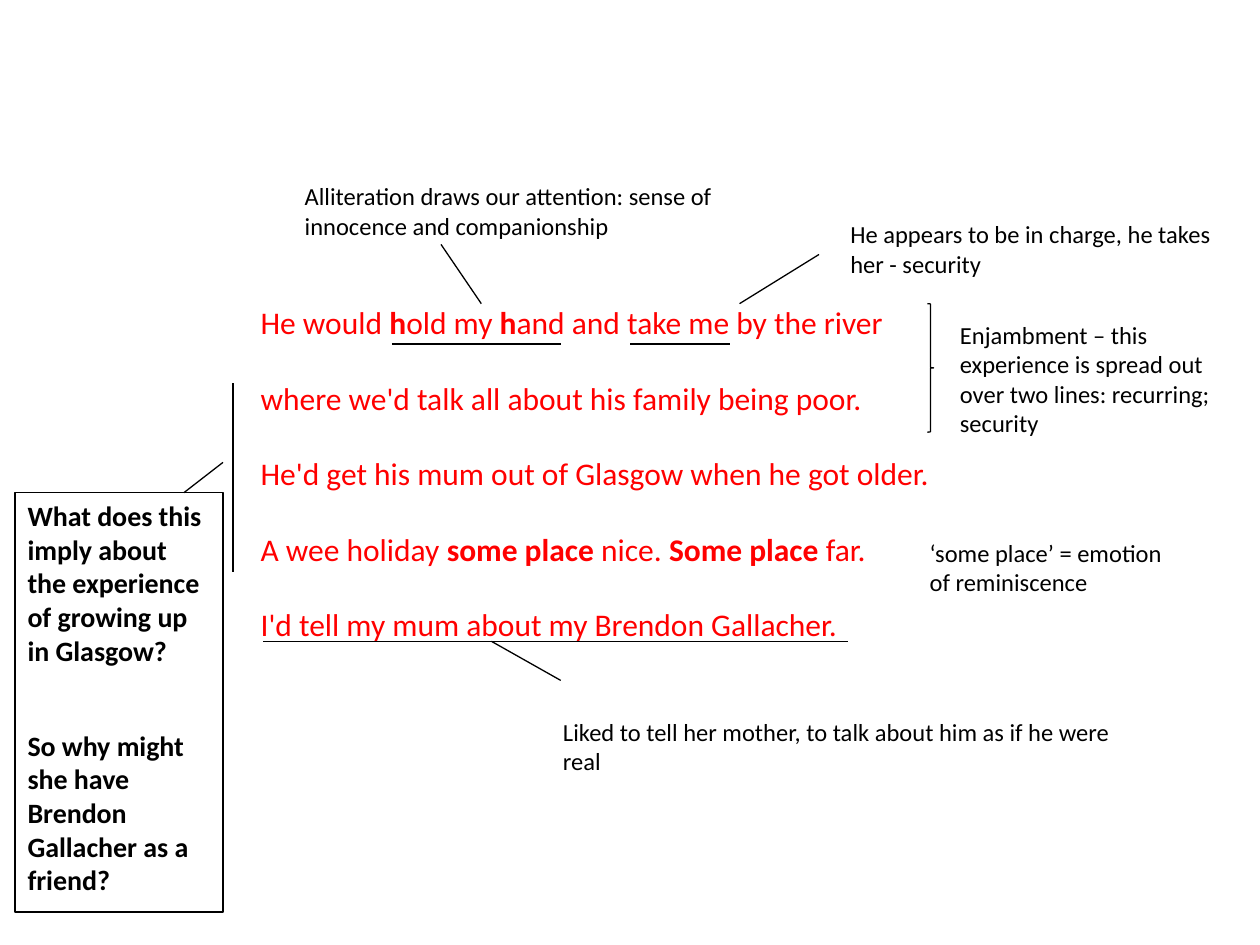
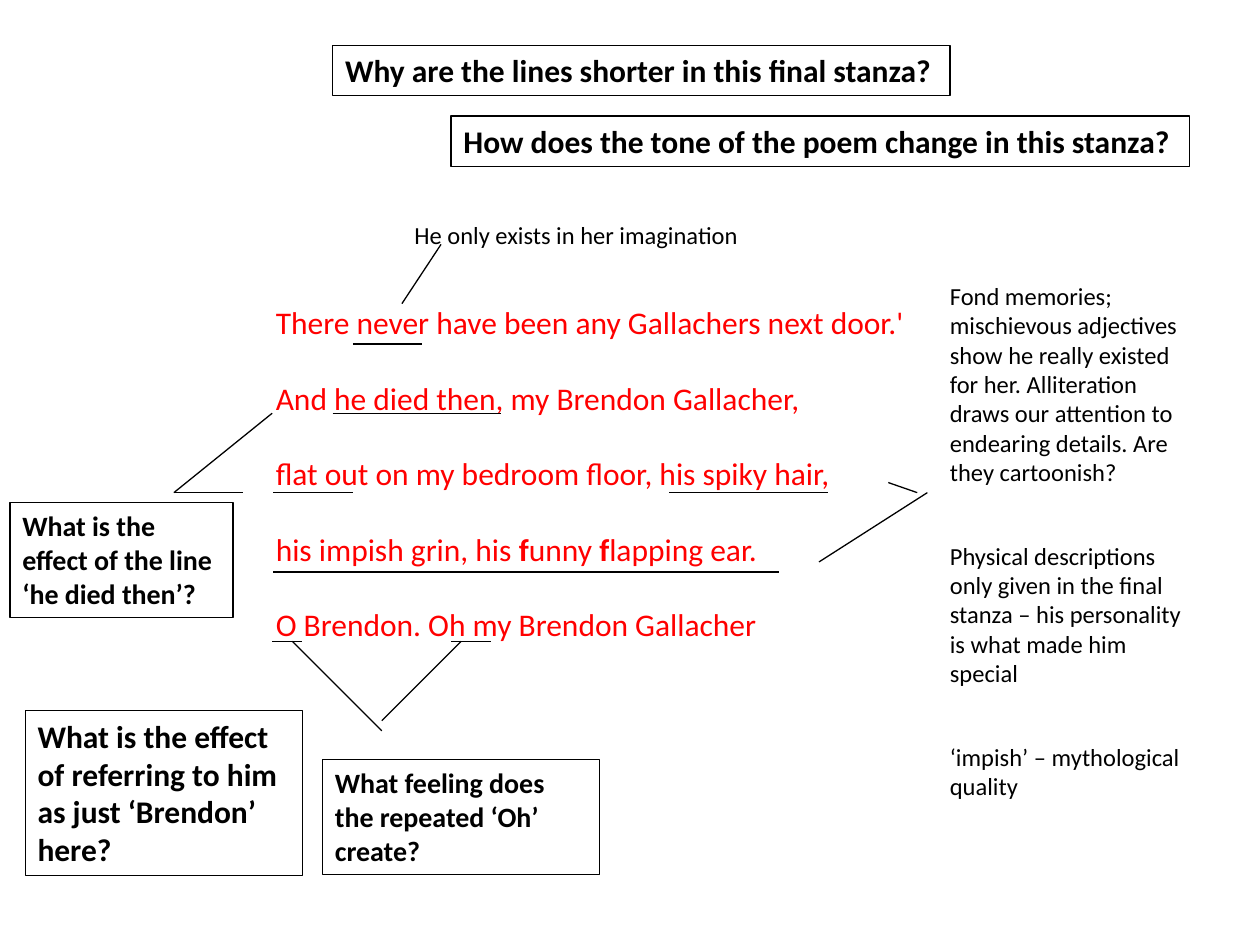
from pptx import Presentation
from pptx.dml.color import RGBColor
from pptx.enum.shapes import MSO_CONNECTOR, MSO_SHAPE
from pptx.enum.text import MSO_ANCHOR, MSO_AUTO_SIZE, PP_ALIGN
from pptx.oxml.ns import qn
from pptx.util import Inches, Pt
from lxml import etree

BLACK = RGBColor(0x00, 0x00, 0x00)
RED = RGBColor(0xFF, 0x00, 0x00)
FONT = "Calibri"
LINE_WIDTH = Pt(0.75)
POEM_GAP = 1.2
NOTE_GAP = 2.2

STRAIGHT = MSO_CONNECTOR.STRAIGHT
RECTANGLE = MSO_SHAPE.RECTANGLE
RIGHT_BRACE = MSO_SHAPE.RIGHT_BRACE
TOP = MSO_ANCHOR.TOP
MIDDLE = MSO_ANCHOR.MIDDLE
LEFT = PP_ALIGN.LEFT
FIT_SHAPE = MSO_AUTO_SIZE.SHAPE_TO_FIT_TEXT


class AnnotatedPoem:
    def __init__(self, prs):
        self.prs = prs
        self.s = None

    def new_slide(self):
        self.s = self.prs.slides.add_slide(self.prs.slide_layouts[6])

    def set_text(self, sp, paragraphs, size, color=BLACK, bold=False,
                 gap=NOTE_GAP, anchor=TOP, wrap=True):
        tf = sp.text_frame
        tf.word_wrap = wrap
        tf.auto_size = FIT_SHAPE
        tf.vertical_anchor = anchor
        for i, text in enumerate(paragraphs):
            p = tf.paragraphs[0] if i == 0 else tf.add_paragraph()
            p.alignment = LEFT
            p.font.name = FONT
            p.font.size = Pt(size)
            p.font.color.rgb = color
            p.font.bold = bold
            if i:
                p.space_before = Pt(size * gap)
            for j, part in enumerate(text.split("*")):
                r = p.add_run()
                r.text = part
                if j % 2:
                    r.font.bold = True

    def text_box(self, x, y, w, h):
        return self.s.shapes.add_textbox(Inches(x), Inches(y), Inches(w), Inches(h))

    def outline(self, preset, x, y, w, h):
        sp = self.s.shapes.add_shape(preset, Inches(x), Inches(y), Inches(w), Inches(h))
        sp.shadow.inherit = False
        sp.fill.background()
        sp.line.color.rgb = BLACK
        sp.line.width = LINE_WIDTH
        return sp

    def stanza(self, x, w, verses):
        self.set_text(self.text_box(x, 2.34, w, 2.83), verses, 18, RED,
                      gap=POEM_GAP, anchor=MIDDLE, wrap=False)

    def note(self, x, y, w, h, *paragraphs):
        self.set_text(self.text_box(x, y, w, h), paragraphs, 14)

    def question(self, x, y, w, h, *paragraphs, size=16, wrap=True):
        self.set_text(self.outline(RECTANGLE, x, y, w, h), paragraphs, size,
                      bold=True, wrap=wrap)

    def brace(self, x, y, w, h):
        self.outline(RIGHT_BRACE, x, y, w, h)

    def line(self, x1, y1, x2, y2):
        c = self.s.shapes.add_connector(
            STRAIGHT, Inches(x1), Inches(y1), Inches(x2), Inches(y2))
        c.line.color.rgb = BLACK
        c.line.width = LINE_WIDTH
        etree.SubElement(c._element.spPr, qn("a:effectLst"))

    def underline(self, y, *spans):
        for start, end in spans:
            self.line(start, y, end, y)


def friendship_slide(poem):
    poem.new_slide()
    poem.stanza(1.97, 5.58, [
        "He would *h*old my *h*and and take me by the river",
        "where we'd talk all about his family being poor.",
        "He'd get his mum out of Glasgow when he got older.",
        "A wee holiday *some place* nice. *Some place *far.",
        "I'd tell my mum about my Brendon Gallacher.",
    ])
    poem.underline(2.73, (3.11, 4.45), (5, 5.79))
    poem.underline(5.09, (2.09, 6.73))
    for pointer in [
        (3.82, 2.41, 3.5, 1.94),
        (5.87, 2.41, 6.5, 2.02),
        (1.85, 3.04, 1.85, 4.54),
        (1.77, 3.67, 1.46, 3.91),
        (3.9, 5.09, 4.45, 5.4),
    ]:
        poem.line(*pointer)
    poem.brace(7.36, 2.41, 0.05, 1.02)
    poem.note(2.32, 1.39, 3.7, 0.57,
              "Alliteration draws our attention: sense of innocence and companionship")
    poem.note(6.65, 1.69, 3.35, 0.57,
              "He appears to be in charge, he takes her - security")
    poem.note(7.52, 2.49, 2.2, 1.04,
              "Enjambment – this experience is spread out over two lines: recurring; security")
    poem.note(7.28, 4.22, 2.2, 0.57, "‘some place’ = emotion of reminiscence")
    poem.note(4.37, 5.64, 4.57, 0.57,
              "Liked to tell her mother, to talk about him as if he were real")
    poem.question(0.12, 3.91, 1.65, 3.33,
                  "What does this imply about the experience of growing up in Glasgow?",
                  "So why might she have Brendon Gallacher as a friend?")


def final_stanza_slide(poem):
    poem.new_slide()
    poem.stanza(2.09, 5.31, [
        "There never have been any Gallachers next door.'",
        "And he died then, my Brendon Gallacher,",
        "flat out on my bedroom floor, his spiky hair,",
        "his impish grin, his *f*unny *f*lapping ear.",
        "O Brendon. Oh my Brendon Gallacher",
    ])
    poem.underline(2.73, (2.8, 3.35))
    poem.underline(3.28, (2.64, 3.98))
    poem.underline(3.91, (1.38, 1.93), (2.17, 2.8), (5.31, 6.57))
    poem.underline(4.54, (2.17, 6.18))
    poem.underline(5.09, (2.16, 2.4), (3.58, 3.9))
    for pointer in [
        (3.19, 2.41, 3.5, 1.94),
        (2.16, 3.28, 1.38, 3.91),
        (6.5, 4.46, 7.36, 3.91),
        (7.05, 3.83, 7.28, 3.91),
        (2.32, 5.09, 3.03, 5.8),
        (3.66, 5.09, 3.03, 5.72),
    ]:
        poem.line(*pointer)
    poem.note(3.19, 1.7, 3.39, 0.33, "He only exists in her imagination")
    poem.note(7.44, 2.18, 2.05, 4.34,
              "Fond memories; mischievous adjectives show he really existed for her. "
              "Alliteration draws our attention to endearing details. Are they cartoonish?",
              "Physical descriptions only given in the final stanza – his personality "
              "is what made him special",
              "‘impish’ – mythological quality")
    poem.question(0.08, 3.99, 1.77, 0.91, "What is the effect of the line ‘he died then’?")
    poem.question(2.56, 6.03, 2.2, 0.91, "What feeling does the repeated ‘Oh’ create?")
    poem.question(0.2, 5.64, 2.2, 1.31,
                  "What is the effect of referring to him as just ‘Brendon’ here?", size=18)
    poem.question(2.64, 0.36, 4.9, 0.4,
                  "Why are the lines shorter in this final stanza?", size=18, wrap=False)
    poem.question(3.58, 0.92, 5.86, 0.4,
                  "How does the tone of the poem change in this stanza?", size=18, wrap=False)


def main():
    prs = Presentation()
    prs.slide_width = Inches(10)
    prs.slide_height = Inches(7.5)
    poem = AnnotatedPoem(prs)
    friendship_slide(poem)
    final_stanza_slide(poem)
    prs.save("out.pptx")


if __name__ == "__main__":
    main()
